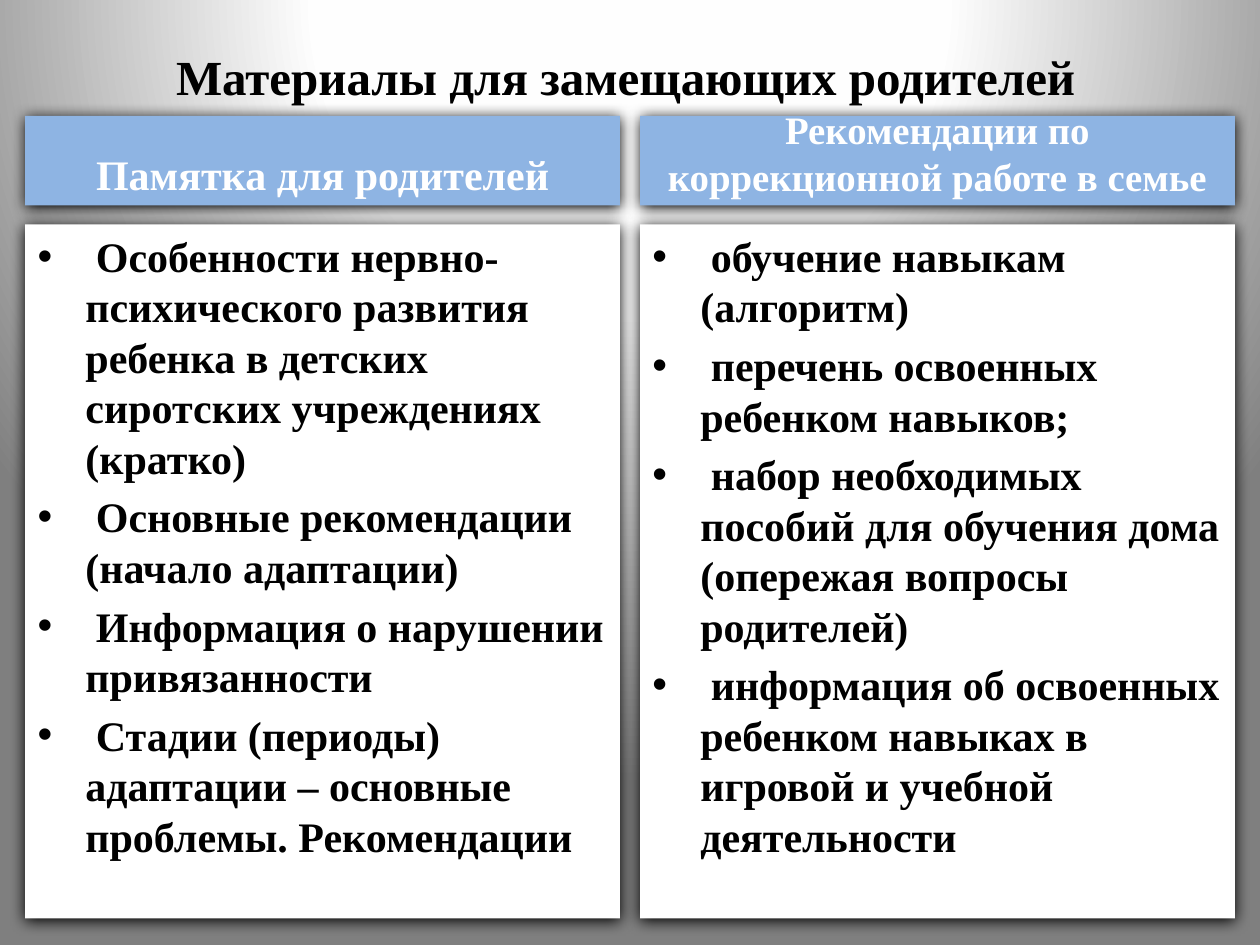
from lxml import etree
from pptx import Presentation
from pptx.dml.color import RGBColor
from pptx.enum.shapes import MSO_SHAPE
from pptx.enum.text import MSO_ANCHOR, PP_ALIGN
from pptx.oxml import parse_xml
from pptx.oxml.ns import nsdecls, qn
from pptx.util import Inches, Pt

RECT = MSO_SHAPE.RECTANGLE
TOP, MIDDLE, BOTTOM = MSO_ANCHOR.TOP, MSO_ANCHOR.MIDDLE, MSO_ANCHOR.BOTTOM
LEFT, CENTER = PP_ALIGN.LEFT, PP_ALIGN.CENTER
FONT = "Times New Roman"
COLORS = {"black": "000000", "white": "FFFFFF", "light": "FEFEFE",
          "gray": "7F7F7F", "blue": "8EB4E3"}

TITLE = "Материалы для замещающих родителей"
COLUMNS = [
    ("Памятка для родителей", 24, [
        " Особенности нервно- психического развития ребенка в детских "
        "сиротских учреждениях (кратко)",
        " Основные рекомендации (начало адаптации)",
        " Информация о нарушении привязанности",
        " Стадии (периоды) адаптации – основные проблемы. Рекомендации",
    ]),
    ("Рекомендации по коррекционной работе в семье", 22.2, [
        " обучение навыкам (алгоритм)",
        " перечень освоенных ребенком навыков;",
        " набор необходимых пособий для обучения дома (опережая вопросы "
        "родителей)",
        " информация об освоенных ребенком навыках в игровой и учебной "
        "деятельности",
    ]),
]


def set_background(s):
    stops = "".join(
        f'<a:gs pos="{pos * 1000}"><a:srgbClr val="{COLORS[name]}"/></a:gs>'
        for pos, name in ((0, "white"), (40, "light"), (100, "gray")))
    bg = parse_xml(
        f'<p:bg {nsdecls("p", "a")}><p:bgPr><a:gradFill rotWithShape="1">'
        f'<a:gsLst>{stops}</a:gsLst><a:path path="circle">'
        '<a:fillToRect l="50000" t="-80000" r="50000" b="180000"/></a:path>'
        '</a:gradFill><a:effectLst/></p:bgPr></p:bg>')
    s.element.cSld.insert(0, bg)


def add_shadow(sp):
    sp.shadow.inherit = False
    effects = sp.element.spPr.find(qn("a:effectLst"))
    shadow = etree.SubElement(effects, qn("a:outerShdw"), blurRad=str(Pt(8.5)),
                              dist=str(Pt(1)), dir="5400000", rotWithShape="0")
    etree.SubElement(shadow, qn("a:srgbClr"), val=COLORS["black"])


def space_before(p, percent):
    """Paragraph gap as a share of the text size."""
    gap = etree.SubElement(p._p.get_or_add_pPr(), qn("a:spcBef"))
    etree.SubElement(gap, qn("a:spcPct"), val=str(percent * 1000))


def add_bullet(p):
    pPr = p._p.get_or_add_pPr()
    pPr.set("marL", str(Inches(0.38)))
    pPr.set("indent", str(-Inches(0.38)))
    etree.SubElement(pPr, qn("a:buFont"), typeface="Arial")
    etree.SubElement(pPr, qn("a:buChar"), char="•")


def write(tf, lines, size, color, align, anchor, gap=20, bullets=False):
    tf.word_wrap = True
    tf.vertical_anchor = anchor
    tf.text = "\n".join(lines)
    for p in tf.paragraphs:
        p.alignment = align
        if gap:
            space_before(p, gap)
        if bullets:
            add_bullet(p)
        for r in p.runs:
            r.font.name = FONT
            r.font.size = Pt(size)
            r.font.bold = True
            r.font.color.rgb = RGBColor.from_string(COLORS[color])


def add_panel(s, x, y, w, h, fill):
    sp = s.shapes.add_shape(RECT, Inches(x), Inches(y), Inches(w), Inches(h))
    sp.fill.solid()
    sp.fill.fore_color.rgb = RGBColor.from_string(COLORS[fill])
    sp.line.fill.background()
    add_shadow(sp)
    return sp.text_frame


def add_title(s, x, y, w, h):
    sp = s.shapes.add_textbox(Inches(x), Inches(y), Inches(w), Inches(h))
    write(sp.text_frame, [TITLE], 28, "black", CENTER, MIDDLE, gap=0)


def add_column(s, x, y, w, h, heading, heading_size, items):
    head_h, gap = 0.71, 0.15
    head = add_panel(s, x, y, w, head_h, "blue")
    write(head, [heading], heading_size, "white", CENTER, BOTTOM)
    body_y = y + head_h + gap
    body = add_panel(s, x, body_y, w, y + h - body_y, "white")
    write(body, items, 24, "black", LEFT, TOP, bullets=True)


def main():
    prs = Presentation()
    prs.slide_width, prs.slide_height = Inches(10), Inches(7.5)
    s = prs.slides.add_slide(prs.slide_layouts[6])
    set_background(s)
    add_title(s, 0.2, 0.3, 9.53, 0.61)
    col_w, col_gap = 4.72, 0.16
    for i, column in enumerate(COLUMNS):
        add_column(s, 0.2 + i * (col_w + col_gap), 0.92, col_w, 6.37, *column)
    prs.save("out.pptx")


if __name__ == "__main__":
    main()
